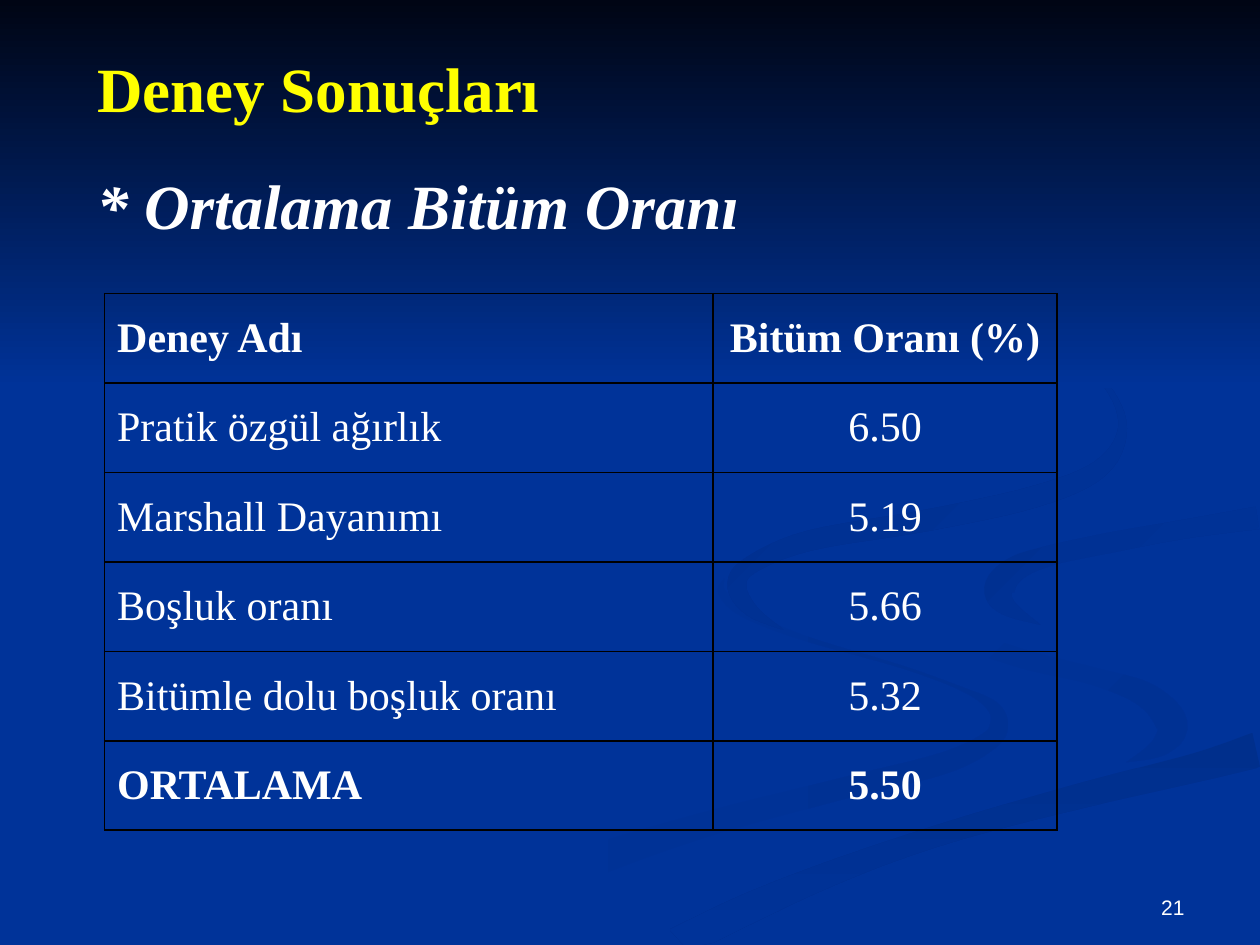
from dataclasses import dataclass
from math import hypot

from lxml.etree import SubElement
from pptx import Presentation
from pptx.dml.color import RGBColor
from pptx.enum.shapes import MSO_SHAPE
from pptx.enum.text import MSO_ANCHOR, MSO_AUTO_SIZE, PP_ALIGN
from pptx.oxml.ns import qn
from pptx.util import Inches, Pt

WHITE = RGBColor(0xFF, 0xFF, 0xFF)
YELLOW = RGBColor(0xFF, 0xFF, 0x00)
BLUE = RGBColor(0x00, 0x33, 0x99)
NIGHT = RGBColor(0x00, 0x05, 0x14)
DEEP_BLUE = RGBColor(0x00, 0x31, 0x93)
SHADE = RGBColor(0x00, 0x2F, 0x8C)
SOFT_SHADE = RGBColor(0x00, 0x30, 0x91)
CURL_SHADE = RGBColor(0x00, 0x2F, 0x8E)
BORDER = RGBColor(0x00, 0x00, 0x00)
SERIF = "Times New Roman"
SANS = "Arial"
WIDTH, HEIGHT = 10, 7.5
UNITS_PER_INCH = 1000
STEPS_PER_KNOT = 6

COLUMN_WIDTHS = (4.83, 2.73)
ROW_HEIGHT = 0.71
ROWS = [
    ("Deney Adı", "Bitüm Oranı (%)"),
    ("Pratik özgül ağırlık", "6.50"),
    ("Marshall Dayanımı", "5.19"),
    ("Boşluk oranı", "5.66"),
    ("Bitümle dolu boşluk oranı", "5.32"),
    ("ORTALAMA", "5.50"),
]


@dataclass
class Ribbon:
    """A swirl whose knots are (x, y, thickness) along its middle line."""
    first: RGBColor
    last: RGBColor
    angle: int
    knots: list


RIBBONS = [
    Ribbon(BLUE, DEEP_BLUE, 0, [
        (5.75, 4.59, 0), (5.73, 4.7, 0.06), (5.9, 4.86, 0.07), (6.37, 5.06, 0.04),
        (7.15, 5.29, 0.02), (7.64, 5.47, 0.03), (7.87, 5.6, 0.09), (7.93, 5.74, 0.14),
        (7.85, 5.88, 0.15), (7.48, 6.06, 0.17), (6.64, 6.27, 0.17), (5.51, 6.57, 0.2),
        (4.41, 6.95, 0.27), (3.3, 7.49, 0.3)]),
    Ribbon(BLUE, DEEP_BLUE, 45, [
        (7.24, 4.64, 0), (7.34, 4.87, 0.1), (7.62, 5.05, 0.15), (8.12, 5.23, 0.15),
        (8.69, 5.37, 0.14), (9.1, 5.52, 0.2), (9.3, 5.75, 0.25), (9.2, 5.93, 0.15),
        (8.94, 6.05, 0)]),
    Ribbon(SHADE, BLUE, 90, [
        (5.37, 7.49, 0.25), (5.92, 7.22, 0.24), (6.5, 6.97, 0.2), (7.09, 6.75, 0.17),
        (7.75, 6.54, 0.17), (8.64, 6.3, 0.2), (9.5, 6.09, 0.23), (9.98, 5.95, 0.28)]),
    Ribbon(SOFT_SHADE, BLUE, 45, [
        (8.26, 4.96, 0), (8, 4.82, 0.14), (7.93, 4.68, 0.24), (8.05, 4.52, 0.2),
        (8.33, 4.41, 0.16), (8.85, 4.3, 0.16), (9.4, 4.2, 0.15), (9.98, 4.11, 0.18)]),
    Ribbon(CURL_SHADE, BLUE, 45, [
        (7.62, 2.33, 0), (8.44, 2.77, 0.03), (8.78, 3.06, 0.04), (8.91, 3.4, 0.07),
        (8.73, 3.72, 0.14), (8.22, 3.94, 0.17), (7.36, 4.13, 0.17), (6.43, 4.29, 0.16),
        (5.95, 4.49, 0.14), (5.85, 4.66, 0.15), (5.97, 4.85, 0.1), (6.22, 5, 0)]),
]


def blend(before, start, end, after, share):
    """Return the Catmull-Rom value at a share of the way from start to end."""
    return start + share / 2 * (
        end - before
        + share * (2 * before - 5 * start + 4 * end - after)
        + share ** 2 * (3 * (start - end) + after - before))


def smooth(knots):
    """Sample a smooth curve that passes through every knot."""
    padded = [knots[0], *knots, knots[-1]]
    samples = [
        tuple(blend(*values, step / STEPS_PER_KNOT) for values in zip(*padded[index:index + 4]))
        for index in range(len(knots) - 1)
        for step in range(STEPS_PER_KNOT)
    ]
    return [*samples, knots[-1]]


def outline(knots):
    """Walk down one edge of a ribbon and back along the other, within the slide."""
    samples = smooth(knots)
    near, far = [], []
    for index, (x, y, thickness) in enumerate(samples):
        previous = samples[max(index - 1, 0)]
        following = samples[min(index + 1, len(samples) - 1)]
        run, rise = following[0] - previous[0], following[1] - previous[1]
        reach = max(thickness, 0) / 2 / hypot(run, rise)
        for edge, side in ((near, reach), (far, -reach)):
            edge.append((min(x - rise * side, WIDTH), min(y + run * side, HEIGHT)))
    return near + far[::-1]


def paint(shape, first, last, angle):
    """Fill a shape with a gradient whose angle turns clockwise, without outline."""
    shape.shadow.inherit = False
    shape.line.fill.background()
    shape.fill.gradient()
    shape.fill.gradient_angle = (360 - angle) % 360
    for stop, color in zip(shape.fill.gradient_stops, (first, last)):
        stop.color.rgb = color


def add_ribbon(page, ribbon):
    """Draw one swirl of the backdrop."""
    points = [(x * UNITS_PER_INCH, y * UNITS_PER_INCH) for x, y in outline(ribbon.knots)]
    builder = page.shapes.build_freeform(*points[0], scale=Inches(1) / UNITS_PER_INCH)
    builder.add_line_segments(points[1:], close=True)
    paint(builder.convert_to_shape(), ribbon.first, ribbon.last, ribbon.angle)


def add_backdrop(page):
    """Lay the blue ground, the swirls and the night sky."""
    page.background.fill.solid()
    page.background.fill.fore_color.rgb = BLUE
    for ribbon in RIBBONS:
        add_ribbon(page, ribbon)
    sky = page.shapes.add_shape(MSO_SHAPE.RECTANGLE, 0, 0, Inches(WIDTH), Inches(3.08))
    paint(sky, NIGHT, BLUE, 90)


def write(frame, text, size, color=WHITE, name=SERIF, bold=False, italic=False,
          align=PP_ALIGN.LEFT, anchor=MSO_ANCHOR.MIDDLE):
    """Put one formatted paragraph into a text frame."""
    frame.word_wrap = True
    frame.vertical_anchor = anchor
    para = frame.paragraphs[0]
    para.text = text
    para.alignment = align
    font = para.font
    font.name, font.size, font.bold, font.italic = name, Pt(size), bold, italic
    font.color.rgb = color


def place_title(page, text):
    """Move the title placeholder above the backdrop and format it."""
    title = page.shapes.title
    title._element.getparent().append(title._element)
    title.left, title.top, title.width, title.height = map(Inches, (0.67, 0.28, 6.38, 0.82))
    title.text_frame.auto_size = MSO_AUTO_SIZE.NONE
    write(title.text_frame, text, 36, YELLOW, bold=True)


def add_label(page, left, top, width, height, text, size, **style):
    """Add a text box with one paragraph."""
    box = page.shapes.add_textbox(*map(Inches, (left, top, width, height)))
    write(box.text_frame, text, size, **style)


def add_borders(cell):
    """Give a cell thin lines on all four sides."""
    properties = cell._tc.get_or_add_tcPr()
    for index, side in enumerate(("a:lnL", "a:lnR", "a:lnT", "a:lnB")):
        line = properties.makeelement(qn(side), {"w": str(Pt(1))})
        properties.insert(index, line)
        SubElement(SubElement(line, qn("a:solidFill")), qn("a:srgbClr"), val=str(BORDER))


def add_results(page):
    """Add the table of bitumen ratios with a bold first and last row."""
    table = page.shapes.add_table(
        len(ROWS), len(COLUMN_WIDTHS), Inches(0.83), Inches(2.33),
        Inches(sum(COLUMN_WIDTHS)), Inches(ROW_HEIGHT * len(ROWS))).table
    for column, width in zip(table.columns, COLUMN_WIDTHS):
        column.width = Inches(width)
    for row, values in zip(table.rows, ROWS):
        bold = values in (ROWS[0], ROWS[-1])
        for cell, value, align in zip(row.cells, values, (PP_ALIGN.LEFT, PP_ALIGN.CENTER)):
            cell.fill.background()
            cell.vertical_anchor = MSO_ANCHOR.MIDDLE
            write(cell.text_frame, value, 24, bold=bold, align=align)
            add_borders(cell)


def main():
    """Build the slide and save the deck."""
    deck = Presentation()
    deck.slide_width, deck.slide_height = Inches(WIDTH), Inches(HEIGHT)
    page = deck.slides.add_slide(deck.slide_layouts[5])
    add_backdrop(page)
    add_label(page, 7.17, 6.83, 2.33, 0.52, "21", 12, name=SANS,
              align=PP_ALIGN.RIGHT, anchor=MSO_ANCHOR.BOTTOM)
    add_label(page, 0.67, 1.15, 6.65, 0.94, "* Ortalama Bitüm Oranı", 36, bold=True, italic=True)
    place_title(page, "Deney Sonuçları")
    add_results(page)
    deck.save("out.pptx")


if __name__ == "__main__":
    main()
